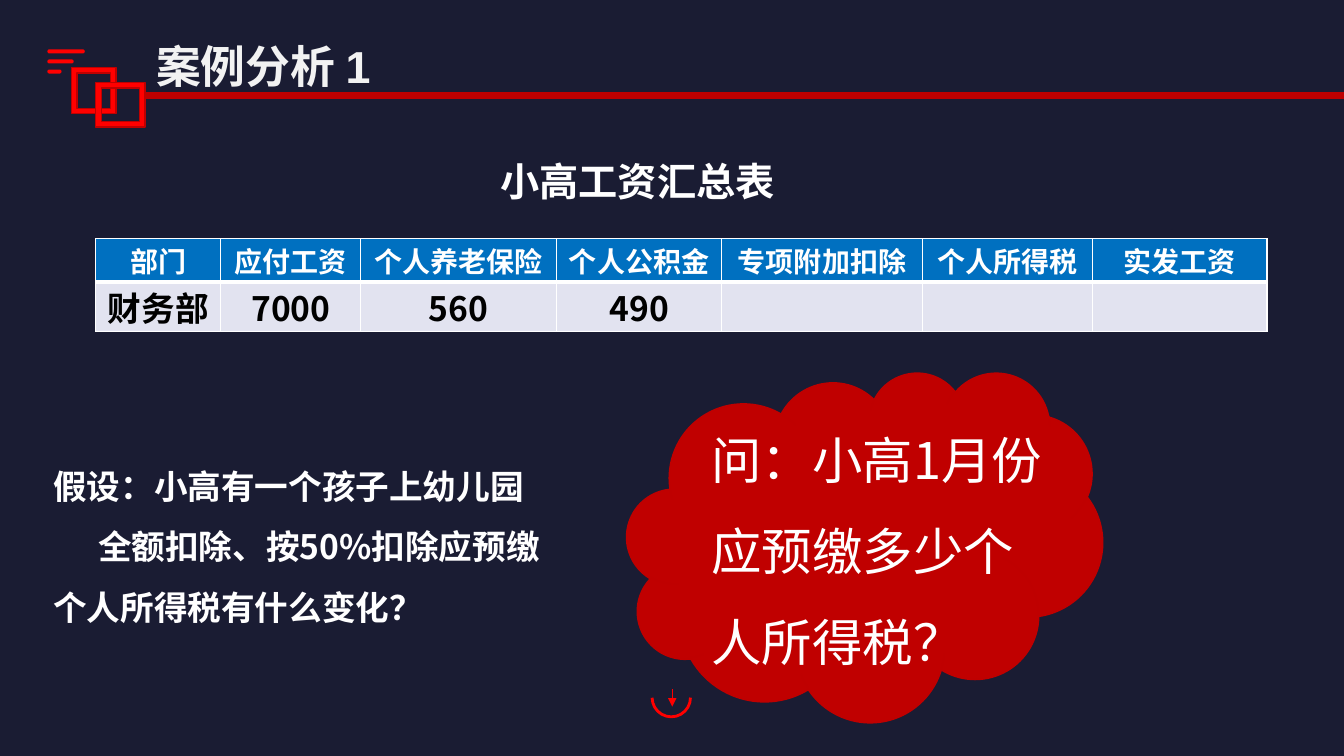
import pptx
import pptx.util
import pptx.dml.color
import pptx.enum.shapes
import pptx.enum.text
import pptx.oxml
import pptx.oxml.ns
import lxml.etree

Pt = pptx.util.Pt
Kind = pptx.enum.shapes.MSO_SHAPE
Align = pptx.enum.text.PP_ALIGN
Anchor = pptx.enum.text.MSO_ANCHOR
qn = pptx.oxml.ns.qn
SANS = "Noto Sans CJK SC"
HEADS = ["部门", "应付工资", "个人养老保险", "个人公积金",
         "专项附加扣除", "个人所得税", "实发工资"]
PAY = ["财务部", "7000", "560", "490", "", "", ""]
WIDTHS = [89.3, 100.1, 139.7, 118.1, 143.3, 121.7, 124.5]


def color(code):
    """Turn a hex string into a colour."""
    return pptx.dml.color.RGBColor.from_string(code)


def child(parent, tag, **attrs):
    """Append a drawing element to a parent."""
    return lxml.etree.SubElement(parent, qn(tag), **attrs)


def style(para, size, code="FFFFFF", bold=True, face=SANS, align=None):
    """Set the font and alignment of a paragraph."""
    font = para.font
    font.name, font.size, font.bold = face, Pt(size), bold
    font.color.rgb = color(code)
    child(para._p.pPr.find(qn("a:defRPr")), "a:ea", typeface=SANS)
    para.alignment = align


def text(slide, box, lines, size, space=None, **look):
    """Add a text box and return its paragraphs."""
    frame = slide.shapes.add_textbox(*map(Pt, box)).text_frame
    frame.word_wrap = True
    frame.text = "\n".join(lines)
    for para in frame.paragraphs:
        style(para, size, **look)
        para.line_spacing = space
    return frame.paragraphs


def shape(slide, kind, box, fill, line, width):
    """Add a preset shape."""
    item = slide.shapes.add_shape(kind, *map(Pt, box))
    item.shadow.inherit = False
    if fill:
        item.fill.solid()
        item.fill.fore_color.rgb = color(fill)
    else:
        item.fill.background()
    item.line.color.rgb = color(line)
    item.line.width = Pt(width)
    return item


def rule(slide, ends, code, width, arrow=False):
    """Add a straight line, with an arrowhead if asked."""
    straight = pptx.enum.shapes.MSO_CONNECTOR.STRAIGHT
    item = slide.shapes.add_connector(straight, *map(Pt, ends))
    item.line.color.rgb = color(code)
    item.line.width = Pt(width)
    if arrow:
        child(item.line._get_or_add_ln(), "a:tailEnd", type="triangle")
    child(item._element.spPr, "a:effectLst")


def border(cell, base):
    """Draw white borders round a cell, with a given base width."""
    props = cell._tc.get_or_add_tcPr()
    sides = [("L", 1), ("R", 1), ("T", 1), ("B", base)]
    for spot, (side, width) in enumerate(sides):
        line = lxml.etree.Element(qn("a:ln" + side), w=str(Pt(width)))
        child(child(line, "a:solidFill"), "a:srgbClr", val="FFFFFF")
        props.insert(spot, line)


def table(slide):
    """Add the pay table."""
    grid = slide.shapes.add_table(
        2, len(HEADS), Pt(68.4), Pt(170.6), Pt(sum(WIDTHS)), Pt(66)).table
    for col, width in zip(grid.columns, WIDTHS):
        col.width = Pt(width)
    looks = [(HEADS, 31, 20, "FFFFFF", "0070C0", 3),
             (PAY, 35, 24, "000000", "E2E3F0", 1)]
    for row, (words, height, size, ink, fill, base) in zip(grid.rows, looks):
        row.height = Pt(height)
        for cell, word in zip(row.cells, words):
            cell.text = word
            cell.fill.solid()
            cell.fill.fore_color.rgb = color(fill)
            cell.vertical_anchor = Anchor.MIDDLE
            cell.margin_top = cell.margin_bottom = 0
            style(cell.text_frame.paragraphs[0], size, ink, align=Align.CENTER)
            border(cell, base)


def decor(slide):
    """Add the header marks and the arrow at the foot."""
    arc = shape(slide, Kind.ARC, (465.8, 484.6, 27.4, 27.4), None, "FF0000", 2)
    arc.adjustments[0], arc.adjustments[1] = 162, 53.78
    arc.rotation = 90
    rule(slide, (480.2, 492.5, 480.2, 504.7), "FF0000", 0.5, True)
    for step, width in enumerate([25.2, 17.3, 8.6]):
        bar = shape(slide, Kind.ROUNDED_RECTANGLE,
                    (34.6, 36 + 7.2 * step, width, 1.4),
                    "FF0000", "FF0000", 1.5)
        bar.adjustments[0] = 0.5
    for box in [(51.1, 48.2, 31.7, 33.1), (68.4, 59, 35.3, 31.7)]:
        shape(slide, Kind.FRAME, box, "FF0000", "BF0000", 1)
    rule(slide, (104.4, 68.4, 960, 68.4), "BD0000", 5)


def main():
    """Build the slide and save it."""
    deck = pptx.Presentation()
    deck.slide_width, deck.slide_height = Pt(960), Pt(540)
    slide = deck.slides.add_slide(deck.slide_layouts[6])
    slide.background.fill.solid()
    slide.background.fill.fore_color.rgb = color("1A1C33")
    decor(slide)
    text(slide, (104.4, 23.8, 319.7, 46), ["案例分析 1"], 32,
         code="F2F2F2", face="Arial")
    text(slide, (123.1, 108.7, 664.6, 41), ["小高工资汇总表"], 28,
         align=Align.CENTER)
    table(slide)
    shape(slide, Kind.CLOUD, (447.8, 265.7, 339.8, 249.8),
          "C00000", "BF0000", 1)
    text(slide, (501.1, 281.5, 258.5, 203.8),
         ["问：小高1月份应预缴多少个人所得税？"], 36, 1.5, bold=False)
    paras = text(slide, (31, 314.6, 416.9, 138.2),
                 ["假设：小高有一个孩子上幼儿园",
                  "全额扣除、按50%扣除应预缴\v个人所得税有什么变化？"], 24, 1.5)
    paras[1]._p.pPr.set("indent", str(Pt(32)))
    deck.save("out.pptx")


if __name__ == "__main__":
    main()
